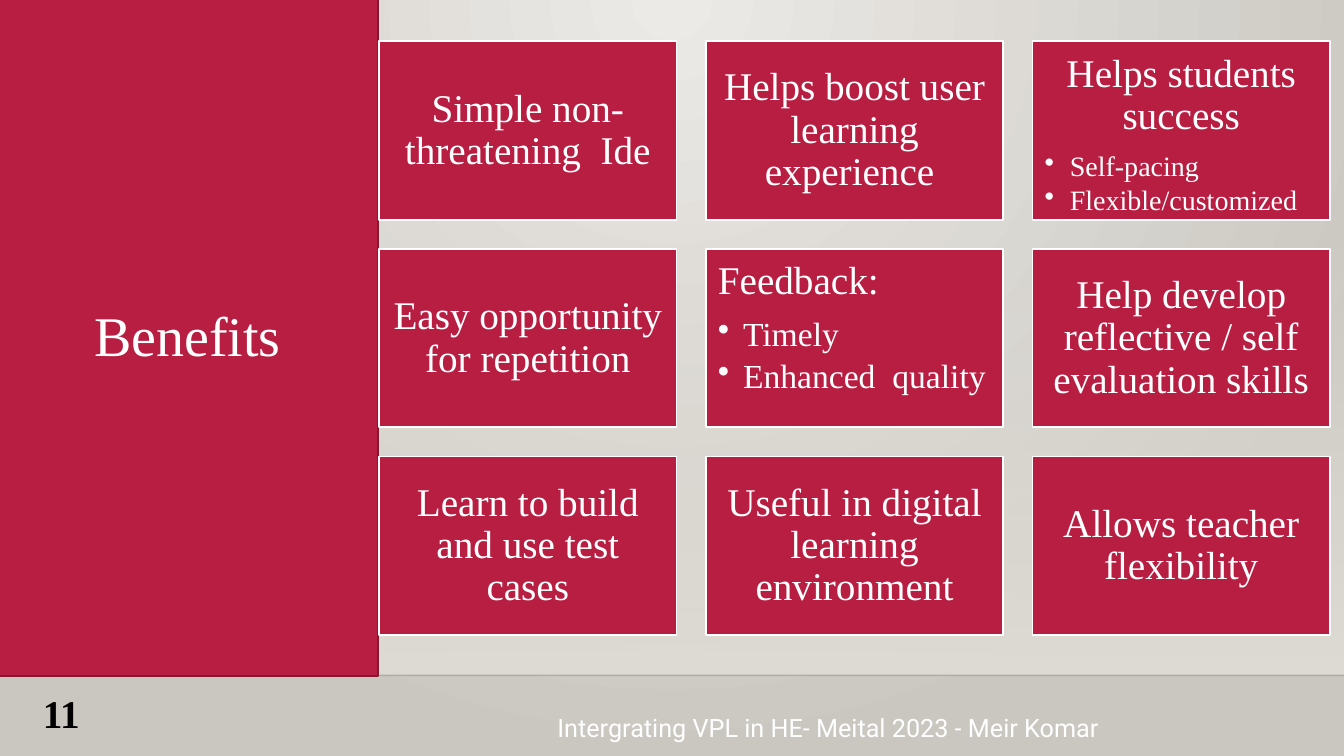
import lxml.etree
import pptx
import pptx.dml.color
import pptx.enum.shapes
import pptx.enum.text
import pptx.oxml.ns
import pptx.util

PX = 9144
SERIF = "Times New Roman"
CRIMSON, WHITE = "B71E42", "FFFFFF"
ALIGN = pptx.enum.text.PP_ALIGN
ANCHOR = pptx.enum.text.MSO_ANCHOR
BENEFITS = [
    ("Simple non-threatening  Ide", {}),
    ("Helps boost user learning experience ", {}),
    ("Helps students success",
     {"points": ["Self-pacing", "Flexible/customized"], "point_size": 20}),
    ("Easy opportunity for repetition", {}),
    ("Feedback:",
     {"points": ["Timely", "Enhanced  quality"], "point_size": 24, "align": ALIGN.LEFT}),
    ("Help develop reflective / self evaluation skills", {}),
    ("Learn to build and use test cases", {}),
    ("Useful in digital learning environment", {}),
    ("Allows teacher flexibility", {}),
]


def px(*lengths):
    """Turn pixel lengths into EMU."""
    return [pptx.util.Emu(length * PX) for length in lengths]


def colour(value):
    """Turn a hex string into a colour."""
    return pptx.dml.color.RGBColor.from_string(value)


def apply(target, formats):
    """Set every attribute in a dict of format values."""
    for name, value in formats.items():
        setattr(target, name, value)


def add_xml(parent, tag, **attributes):
    """Append a drawing element to its parent."""
    return lxml.etree.SubElement(parent, pptx.oxml.ns.qn(tag), attributes)


def set_gradient(fill, owner, colours):
    """Give a fill two gradient colours and return its element."""
    fill.gradient()
    for stop, value in zip(fill.gradient_stops, colours):
        stop.color.rgb = colour(value)
    return owner.find(".//" + pptx.oxml.ns.qn("a:gradFill"))


def add_background(slide):
    """Shade the slide outwards from its top centre."""
    gradient = set_gradient(slide.background.fill, slide.element, ["ECEAE7", "CAC7C1"])
    gradient.remove(gradient.find(pptx.oxml.ns.qn("a:lin")))
    circle = add_xml(gradient, "a:path", path="circle")
    add_xml(circle, "a:fillToRect", l="43000", t="0", r="43000", b="100000")


def add_rect(slide, box):
    """Add a rectangle without a shadow."""
    rect = slide.shapes.add_shape(pptx.enum.shapes.MSO_SHAPE.RECTANGLE, *px(*box))
    rect.shadow.inherit = False
    return rect


def add_wall(slide):
    """Add the wall that fades in towards the floor line."""
    wall = add_rect(slide, (0, 221, 1333, 449))
    wall.line.fill.background()
    gradient = set_gradient(wall.fill, wall.element, ["DFDBD5", "DFDBD5"])
    wall.fill.gradient_angle = 270
    clear = gradient.find(".//" + pptx.oxml.ns.qn("a:srgbClr"))
    add_xml(clear, "a:alpha", val="0")


def add_floor_line(slide):
    """Add the faint line across the slide."""
    floor = slide.shapes.add_connector(
        pptx.enum.shapes.MSO_CONNECTOR.STRAIGHT, *px(0, 670, 1333, 670))
    floor.line.width = pptx.util.Pt(1)
    floor.line.color.rgb = colour("000001")
    shade = floor.element.find(".//" + pptx.oxml.ns.qn("a:srgbClr"))
    add_xml(shade, "a:alpha", val="20000")
    add_xml(floor.element.spPr, "a:effectLst")


def add_panel(slide, box, edge):
    """Add a crimson rectangle with an outline."""
    panel = add_rect(slide, box)
    panel.fill.solid()
    panel.fill.fore_color.rgb = colour(CRIMSON)
    panel.line.color.rgb = colour(edge)
    panel.line.width = pptx.util.Pt(1.25)
    return panel


def write(paragraph, text, size, align, font=SERIF, ink=WHITE, bold=False):
    """Write one formatted run into a paragraph."""
    paragraph.alignment = align
    run = paragraph.add_run()
    run.text = text
    apply(run.font, {"name": font, "size": pptx.util.Pt(size), "bold": bold})
    run.font.color.rgb = colour(ink)


def add_label(slide, box, text, size, align, anchor, **style):
    """Add a text box with one line of text."""
    frame = slide.shapes.add_textbox(*px(*box)).text_frame
    apply(frame, {"word_wrap": True, "vertical_anchor": anchor})
    write(frame.paragraphs[0], text, size, align, **style)


def add_point(frame, text, size):
    """Add a bulleted paragraph."""
    point = frame.add_paragraph()
    indent = 25 * PX
    properties = point._p.get_or_add_pPr()
    apply_indent = {"marL": str(indent), "indent": str(-indent)}
    properties.attrib.update(apply_indent)
    add_xml(properties, "a:buChar", char="•")
    write(point, text, size, ALIGN.LEFT)


def add_benefit(slide, box, heading, points=(), point_size=20, align=ALIGN.CENTER):
    """Add a benefit card with a heading and optional points."""
    frame = add_panel(slide, box, WHITE).text_frame
    margins = {f"margin_{side}": px(12)[0] for side in ("left", "top", "right", "bottom")}
    anchor = ANCHOR.TOP if points else ANCHOR.MIDDLE
    apply(frame, {"word_wrap": True, "vertical_anchor": anchor, **margins})
    write(frame.paragraphs[0], heading, 28, align)
    for text in points:
        add_point(frame, text, point_size)
    for paragraph in frame.paragraphs:
        paragraph.line_spacing = 0.9
    for paragraph in frame.paragraphs[:-1]:
        paragraph.space_after = pptx.util.Pt(round(point_size * 0.15))
    if points:
        frame.paragraphs[0].space_after = pptx.util.Pt(10)


def main():
    """Build the benefits slide."""
    deck = pptx.Presentation()
    deck.slide_width, deck.slide_height = px(1333, 750)
    slide = deck.slides.add_slide(deck.slide_layouts[6])
    add_background(slide)
    add_wall(slide)
    add_floor_line(slide)
    title = add_panel(slide, (-3, -9, 378, 680), "871631").text_frame
    title.vertical_anchor = ANCHOR.MIDDLE
    write(title.paragraphs[0], "Benefits", 40, ALIGN.CENTER)
    add_label(slide, (543, 706, 872, 31), "Intergrating VPL in HE- Meital 2023 - Meir Komar",
              18, ALIGN.LEFT, ANCHOR.MIDDLE, font="Roboto")
    add_label(slide, (0, 679, 89, 55), "11", 28, ALIGN.RIGHT, ANCHOR.TOP,
              ink="000000", bold=True)
    for index, (heading, details) in enumerate(BENEFITS):
        row, column = divmod(index, 3)
        box = (376 + 324 * column, 41 + 206 * row, 295, 177)
        add_benefit(slide, box, heading, **details)
    deck.save("out.pptx")


if __name__ == "__main__":
    main()
